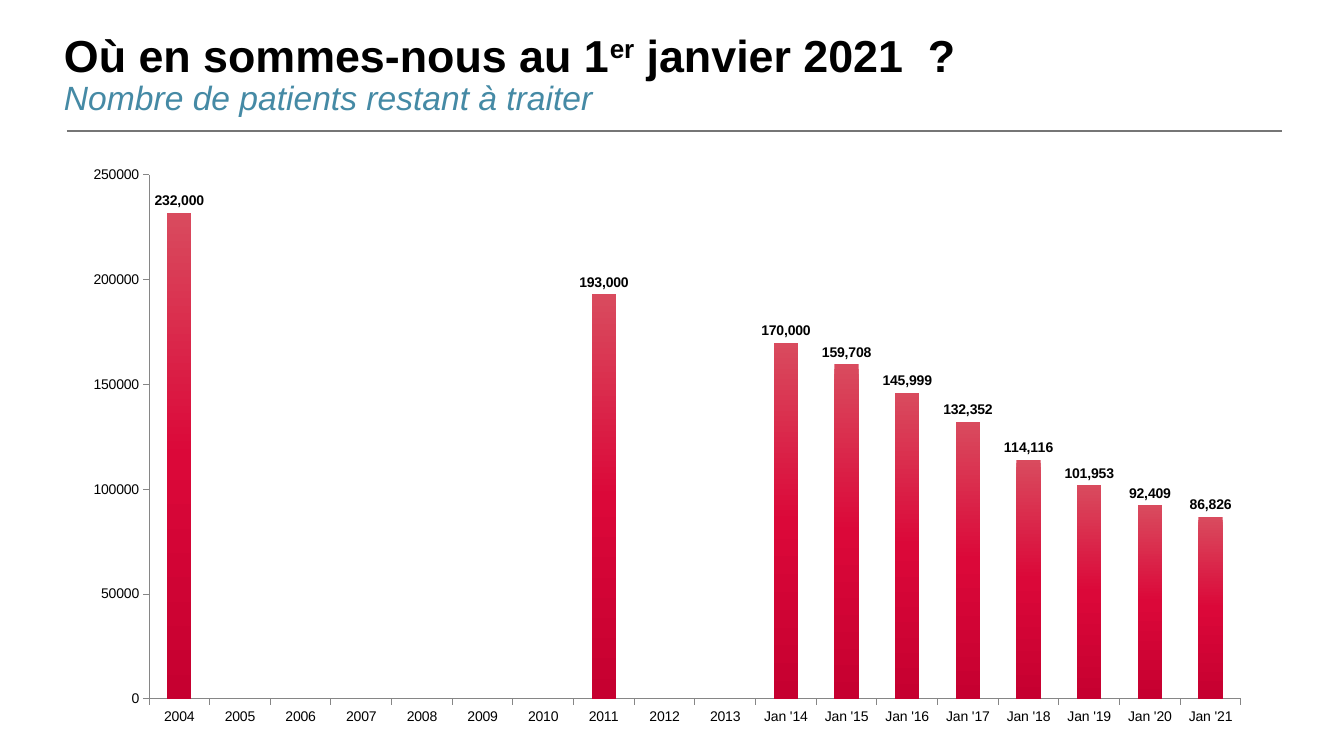
from copy import deepcopy

from lxml.etree import SubElement
from pptx import Presentation
from pptx.chart.data import CategoryChartData
from pptx.dml.color import RGBColor
from pptx.enum.chart import XL_CHART_TYPE, XL_LABEL_POSITION, XL_TICK_MARK
from pptx.enum.shapes import MSO_CONNECTOR
from pptx.enum.text import MSO_ANCHOR
from pptx.oxml.ns import qn
from pptx.util import Pt

SCALE = 914400 / 100.8


def px(length):
    return round(length * SCALE)


def color(value):
    return RGBColor.from_string(value)


deck = Presentation()
deck.slide_width, deck.slide_height = px(1344), px(756)
page = deck.slides.add_slide(deck.slide_layouts[6])

# Rule under the heading
rule = page.shapes.add_connector(MSO_CONNECTOR.STRAIGHT, px(67), px(131), px(1282), px(131))
rule.line.color.rgb = color("767676")
rule.line.width = Pt(1)
SubElement(rule._element.spPr, qn("a:effectLst"))

# Heading and subtitle
box = page.shapes.add_textbox(px(54), px(36), px(1239), px(87))
frame = box.text_frame
frame.word_wrap = True
frame.vertical_anchor = MSO_ANCHOR.BOTTOM
para = frame.paragraphs[0]
para.line_spacing = 0.9
heading = {"name": "Arial", "size": Pt(32), "bold": True, "italic": False}
subtitle = {"name": "Arial", "size": Pt(24), "bold": False, "italic": True}
spans = [
    ("Où en sommes-nous au 1", heading, "000000"),
    ("er", heading, "000000"),
    (" janvier 2021  ?", heading, "000000"),
    ("Nombre de patients restant à traiter", subtitle, "458AA5"),
]
for text, formats, ink in spans:
    if formats is subtitle:
        para.add_line_break()
    span = para.add_run()
    span.text = text
    for name, value in formats.items():
        setattr(span.font, name, value)
    span.font.color.rgb = color(ink)
    if text == "er":
        span.font._element.set("baseline", "30000")

# Patients still to treat, by year
patients = {
    "2004": 232000, "2011": 193000, "Jan '14": 170000, "Jan '15": 159708,
    "Jan '16": 145999, "Jan '17": 132352, "Jan '18": 114116,
    "Jan '19": 101953, "Jan '20": 92409, "Jan '21": 86826,
}
years = [str(year) for year in range(2004, 2014)]
years += [f"Jan '{year}" for year in range(14, 22)]
data = CategoryChartData()
data.categories = years
data.add_series("Series 1", [patients.get(year) for year in years])
chart = page.shapes.add_chart(
    XL_CHART_TYPE.COLUMN_CLUSTERED, px(70), px(155), px(1196), px(581), data
).chart
chart.has_legend = False
chart.has_title = False
chart.font.name = "Arial"
chart.font.size = Pt(10)
chart.font.color.rgb = color("000000")

# Axes
for axis in (chart.category_axis, chart.value_axis):
    axis.has_major_gridlines = False
    axis.major_tick_mark = XL_TICK_MARK.OUTSIDE
    axis.minor_tick_mark = XL_TICK_MARK.NONE
    axis.format.line.color.rgb = color("868686")
    axis.format.line.width = Pt(0.75)
scale_axis = {"minimum_scale": 0, "maximum_scale": 250000, "major_unit": 50000}
for name, value in scale_axis.items():
    setattr(chart.value_axis, name, value)
chart.value_axis.tick_labels.number_format = "General"
chart.value_axis.tick_labels.number_format_is_linked = False

# Plot area as fractions of the chart
plot_area = chart._chartSpace.chart.plotArea
for old_layout in plot_area.findall(qn("c:layout")):
    plot_area.remove(old_layout)
layout = SubElement(plot_area, qn("c:layout"))
plot_area.insert(0, layout)
manual = SubElement(layout, qn("c:manualLayout"))
placement = {
    "layoutTarget": "inner", "xMode": "edge", "yMode": "edge",
    "x": 79 / 1196, "y": 20 / 581, "w": 1092 / 1196, "h": 524 / 581,
}
for name, value in placement.items():
    SubElement(manual, qn(f"c:{name}")).set("val", str(value))

# Columns with a three-stop gradient, light at the top
plot = chart.plots[0]
plot.gap_width = 150
plot.vary_by_categories = False
series = plot.series[0]
series.invert_if_negative = False
fill = series.format.fill
fill.gradient()
fill.gradient_angle = 270
stop_list = next(series._element.iter(qn("a:gsLst")))
stop_list.insert(1, deepcopy(stop_list[0]))
stops = [(0, "D94B5E"), (0.5, "DB0839"), (1, "C60030")]
for stop, (position, tint) in zip(fill.gradient_stops, stops):
    stop.position = position
    stop.color.rgb = color(tint)

# Value labels
labels = series.data_labels
label_formats = {
    "show_value": True,
    "number_format": "#,##0",
    "number_format_is_linked": False,
    "position": XL_LABEL_POSITION.OUTSIDE_END,
}
for name, value in label_formats.items():
    setattr(labels, name, value)
for name, value in {"name": "Arial", "size": Pt(10), "bold": True}.items():
    setattr(labels.font, name, value)
labels.font.color.rgb = color("000000")

deck.save("out.pptx")
